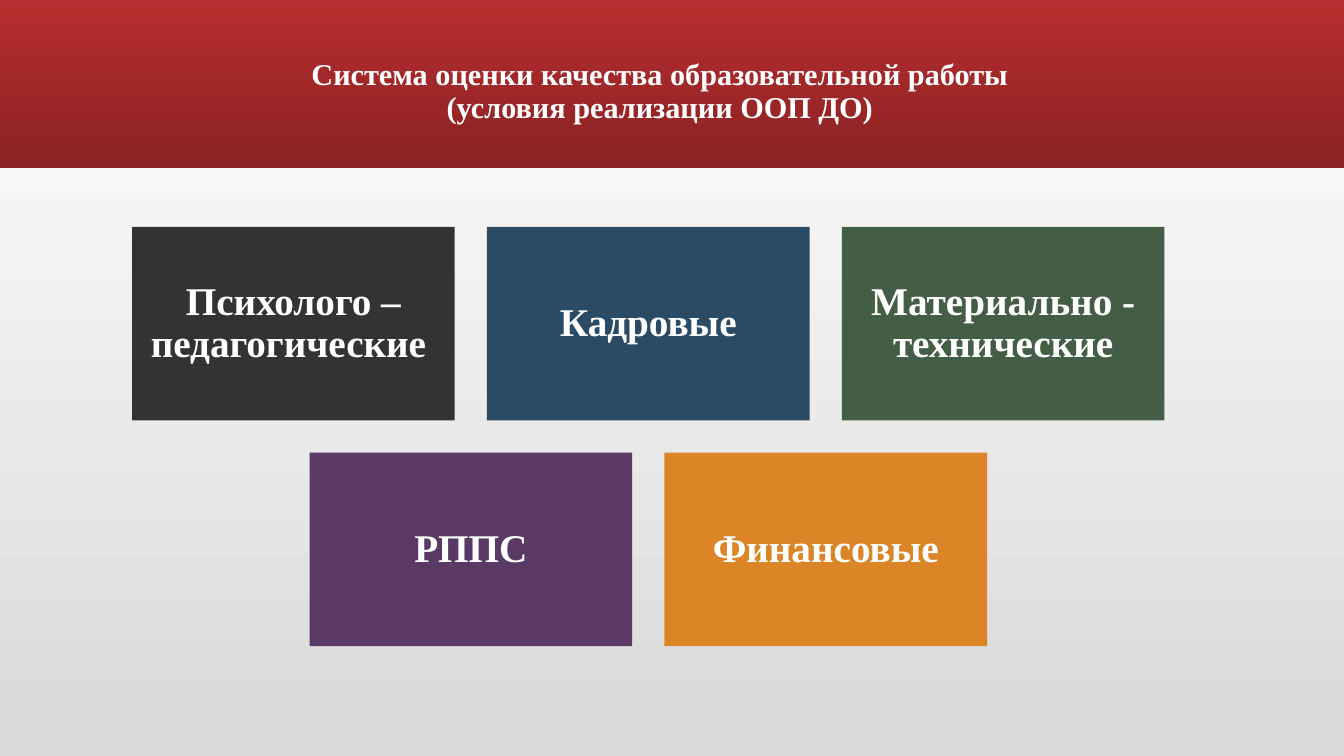
from dataclasses import dataclass

from pptx import Presentation
from pptx.dml.color import RGBColor
from pptx.dml.fill import FillFormat
from pptx.enum.shapes import MSO_SHAPE
from pptx.enum.text import MSO_ANCHOR, PP_ALIGN
from pptx.shapes.autoshape import Shape
from pptx.slide import Slide
from pptx.util import Inches, Pt

RECTANGLE = MSO_SHAPE.RECTANGLE
MIDDLE = MSO_ANCHOR.MIDDLE
CENTER = PP_ALIGN.CENTER

FONT = "Times New Roman"
WHITE = "FFFFFF"
SLIDE_WIDTH, SLIDE_HEIGHT = 13.33, 7.5

# Tile grid, in inches
TILE_WIDTH, TILE_HEIGHT, TILE_GAP = 3.2, 1.92, 0.32
GRID_CENTER, GRID_TOP = 6.43, 2.25
TILE_INSET = 0.12


@dataclass(frozen=True)
class Tile:
    text: str
    color: str


TITLE_LINES = [
    "Система оценки качества образовательной работы",
    "(условия реализации ООП ДО)",
]
TILE_ROWS = [
    [
        Tile("Психолого – педагогические ", "333333"),
        Tile("Кадровые", "2B4A63"),
        Tile("Материально - технические", "445E45"),
    ],
    [Tile("РППС", "5A3A64"), Tile("Финансовые", "DB8526")],
]


def rgb(color: str) -> RGBColor:
    return RGBColor.from_string(color)


def fill_downward(fill: FillFormat, top_color: str, bottom_color: str) -> None:
    fill.gradient()
    fill.gradient_angle = 270
    for stop, color in zip(fill.gradient_stops, (top_color, bottom_color)):
        stop.color.rgb = rgb(color)


def add_rectangle(slide: Slide, left: float, top: float, width: float, height: float) -> Shape:
    shape = slide.shapes.add_shape(
        RECTANGLE, Inches(left), Inches(top), Inches(width), Inches(height)
    )
    shape.shadow.inherit = False
    shape.line.fill.background()
    return shape


def write_text(shape: Shape, lines: list[str], size: float) -> None:
    frame = shape.text_frame
    frame.word_wrap = True
    frame.vertical_anchor = MIDDLE
    paragraph = frame.paragraphs[0]
    paragraph.alignment = CENTER
    paragraph.line_spacing = 0.9
    for index, line in enumerate(lines):
        if index:
            paragraph.add_line_break()
        run = paragraph.add_run()
        run.text = line
        run.font.name = FONT
        run.font.size = Pt(size)
        run.font.bold = True
        run.font.color.rgb = rgb(WHITE)


def add_title(slide: Slide) -> None:
    title = slide.shapes.add_textbox(Inches(1.78), Inches(0.29), Inches(9.53), Inches(0.94))
    write_text(title, TITLE_LINES, 21.6)
    title.text_frame.margin_top = Inches(0.31)
    title.text_frame.margin_bottom = Inches(0)


def add_tile(slide: Slide, tile: Tile, left: float, top: float) -> None:
    shape = add_rectangle(slide, left, top, TILE_WIDTH, TILE_HEIGHT)
    shape.fill.solid()
    shape.fill.fore_color.rgb = rgb(tile.color)
    write_text(shape, [tile.text], 28)
    frame = shape.text_frame
    frame.margin_left = frame.margin_right = Inches(TILE_INSET)
    frame.margin_top = frame.margin_bottom = Inches(TILE_INSET)


def main() -> None:
    presentation = Presentation()
    presentation.slide_width = Inches(SLIDE_WIDTH)
    presentation.slide_height = Inches(SLIDE_HEIGHT)
    slide = presentation.slides.add_slide(presentation.slide_layouts[6])

    # Background and title banner
    fill_downward(slide.background.fill, WHITE, "D9D9D9")
    banner = add_rectangle(slide, 0, 0, SLIDE_WIDTH, 1.67)
    fill_downward(banner.fill, "B82D2F", "8A2223")
    add_title(slide)

    # Rows of tiles, each centred on the grid
    for row_index, row in enumerate(TILE_ROWS):
        row_width = len(row) * (TILE_WIDTH + TILE_GAP) - TILE_GAP
        row_left = GRID_CENTER - row_width / 2
        top = GRID_TOP + row_index * (TILE_HEIGHT + TILE_GAP)
        for column, tile in enumerate(row):
            add_tile(slide, tile, row_left + column * (TILE_WIDTH + TILE_GAP), top)

    presentation.save("out.pptx")


if __name__ == "__main__":
    main()
